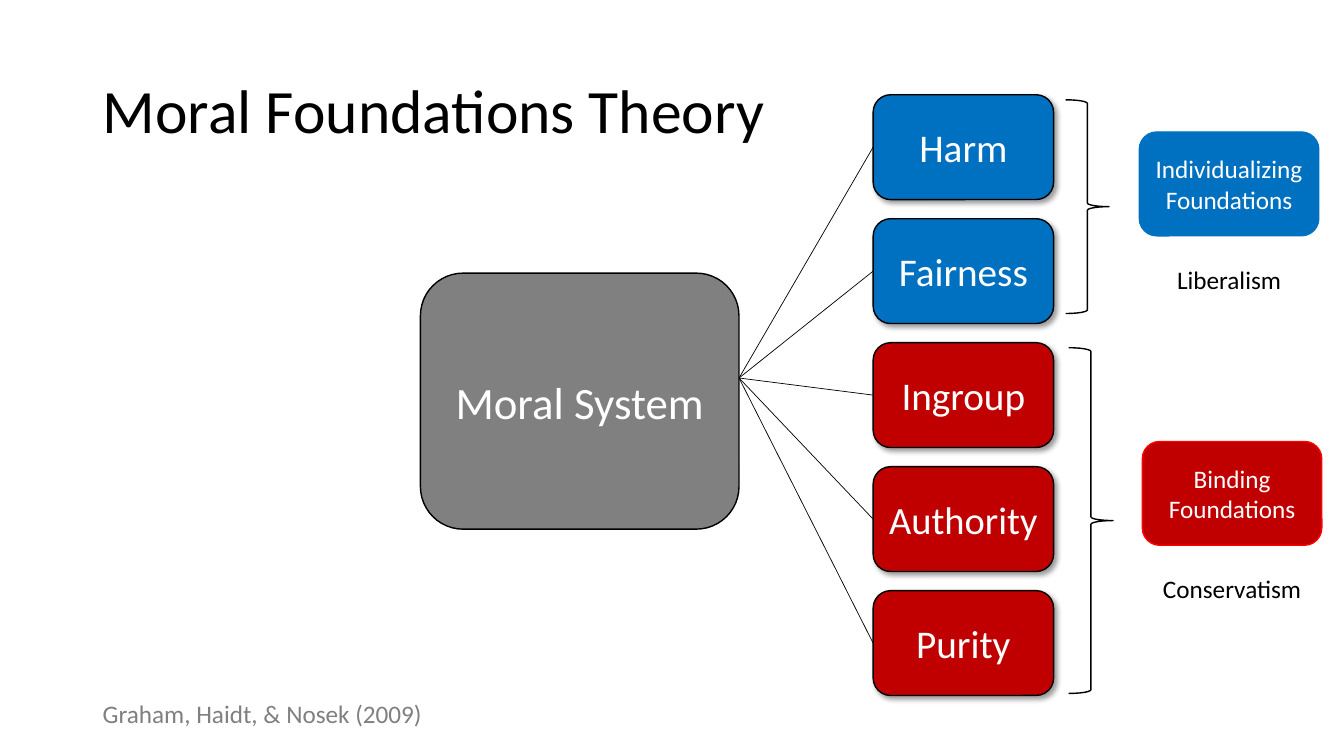
from lxml.etree import SubElement
from pptx import Presentation
from pptx.dml.color import RGBColor
from pptx.enum.shapes import MSO_CONNECTOR, MSO_SHAPE
from pptx.enum.text import MSO_ANCHOR, PP_ALIGN
from pptx.oxml.ns import qn
from pptx.util import Inches, Pt

COLORS = {
    "black": "000000",
    "white": "FFFFFF",
    "gray": "808080",
    "blue": "0070C0",
    "dark_red": "C00000",
    "red": "FF0000",
}


def write_text(shape, text, size, color, align=PP_ALIGN.CENTER, anchor=MSO_ANCHOR.MIDDLE):
    frame = shape.text_frame
    frame.text = text
    frame.word_wrap = True
    frame.vertical_anchor = anchor
    paragraph = frame.paragraphs[0]
    paragraph.alignment = align
    paragraph.font.name = "Calibri"
    paragraph.font.size = Pt(size)
    paragraph.font.color.rgb = RGBColor.from_string(COLORS[color])


def add_outlined(kind, left, top, width, height, line, fill=None):
    shape = slide.shapes.add_shape(
        kind, Inches(left), Inches(top), Inches(width), Inches(height))
    shape.shadow.inherit = False
    shape.line.color.rgb = RGBColor.from_string(COLORS[line])
    shape.line.width = Pt(1)
    if fill:
        shape.fill.solid()
        shape.fill.fore_color.rgb = RGBColor.from_string(COLORS[fill])
        shape.text_frame.margin_left = shape.text_frame.margin_right = Inches(0.05)
    else:
        shape.fill.background()
    return shape


presentation = Presentation()
presentation.slide_width = Inches(13.33)
presentation.slide_height = Inches(7.5)
slide = presentation.slides.add_slide(presentation.slide_layouts[5])

title = slide.shapes.title
title.left, title.top = Inches(0.92), Inches(0.4)
title.width, title.height = Inches(11.5), Inches(1.45)
write_text(title, "Moral Foundations Theory", 44, "black", PP_ALIGN.LEFT)
title.text_frame.paragraphs[0].line_spacing = 0.9

system = add_outlined(MSO_SHAPE.ROUNDED_RECTANGLE, 4.17, 2.71, 3.16, 2.54, "black", "gray")
write_text(system, "Moral System", 32, "white")

foundations = [
    ("Harm", "blue", 28),
    ("Fairness", "blue", 28),
    ("Ingroup", "dark_red", 28),
    ("Authority", "dark_red", 27.5),
    ("Purity", "dark_red", 28),
]
for index, (name, fill, size) in enumerate(foundations):
    foundation = add_outlined(
        MSO_SHAPE.ROUNDED_RECTANGLE, 8.66, 0.94 + 1.23 * index, 1.79, 1.04, "black", fill)
    write_text(foundation, name, size, "white")
    effects = foundation.element.spPr.find(qn("a:effectLst"))
    shadow = SubElement(
        effects, qn("a:outerShdw"), blurRad=str(Pt(4)), dist=str(Pt(3)),
        dir="2700000", algn="tl", rotWithShape="0")
    shadow_color = SubElement(shadow, qn("a:srgbClr"), val=COLORS["black"])
    SubElement(shadow_color, qn("a:alpha"), val="40000")

    connector = slide.shapes.add_connector(
        MSO_CONNECTOR.STRAIGHT, Inches(8.66), Inches(1.46 + 1.23 * index),
        Inches(7.33), Inches(3.75))
    connector.begin_connect(foundation, 1)
    connector.line.color.rgb = RGBColor.from_string(COLORS["black"])
    connector.line.width = Pt(0.5)
    SubElement(connector.element.spPr, qn("a:effectLst"))

groups = [
    ("Individualizing Foundations", "Liberalism", "blue", "blue", 11.3, 1.31, (10.57, 0.99, 0.43, 2.12)),
    ("Binding Foundations", "Conservatism", "dark_red", "red", 11.33, 4.38, (10.6, 3.45, 0.44, 3.43)),
]
for name, ideology, fill, line, left, top, brace in groups:
    add_outlined(MSO_SHAPE.RIGHT_BRACE, *brace, "black")
    group = add_outlined(MSO_SHAPE.ROUNDED_RECTANGLE, left, top, 1.78, 1.03, line, fill)
    write_text(group, name, 18, "white")
    label = slide.shapes.add_textbox(
        Inches(left), Inches(top + 1.26), Inches(1.78), Inches(0.4))
    write_text(label, ideology, 18, "black", anchor=MSO_ANCHOR.TOP)

citation = slide.shapes.add_textbox(Inches(0.92), Inches(6.88), Inches(3.4), Inches(0.4))
write_text(citation, "Graham, Haidt, & Nosek (2009)", 18, "gray", PP_ALIGN.LEFT, MSO_ANCHOR.TOP)
citation.text_frame.word_wrap = False

presentation.save("out.pptx")
